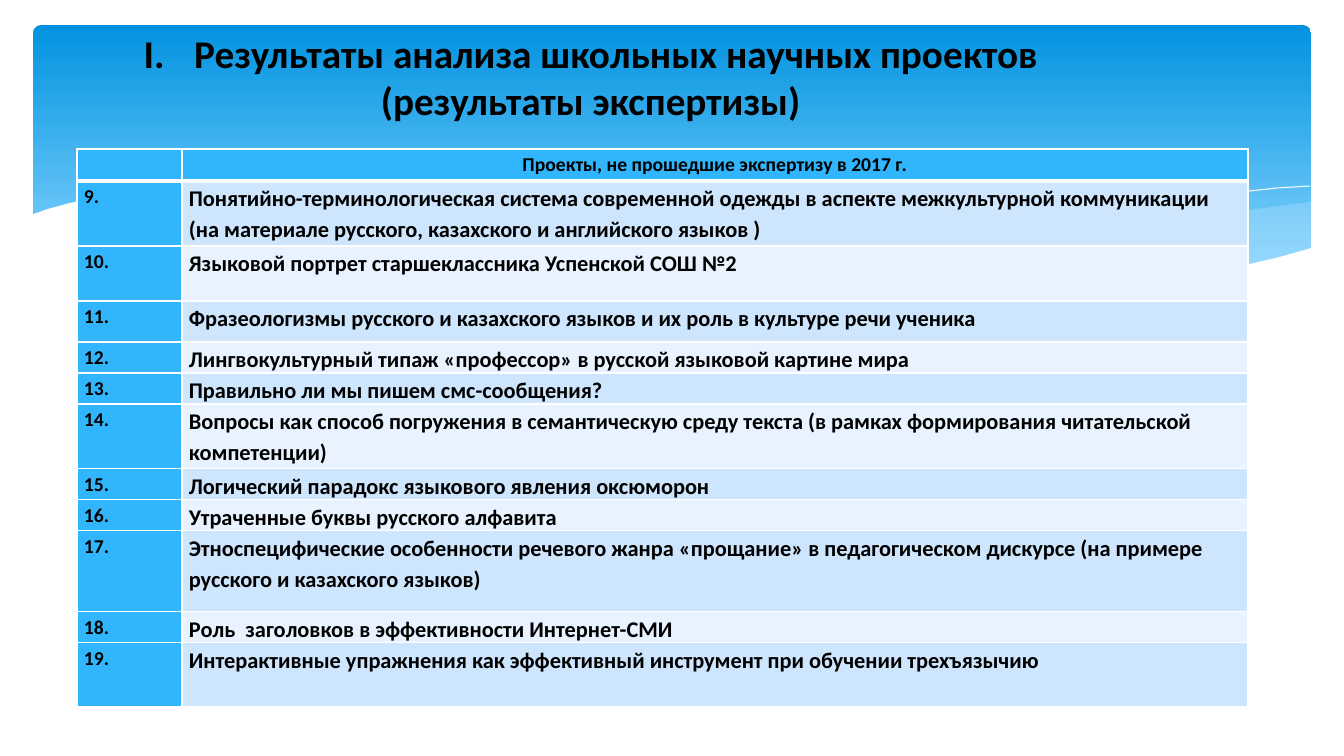
from dataclasses import dataclass

from lxml import etree
from pptx import Presentation
from pptx import util as u
from pptx.dml.color import RGBColor
from pptx.enum import shapes, text
from pptx.oxml import ns

SCALE = 914400 / 100.8


@dataclass(frozen=True)
class Theme:
    """Colours, font and type sizes of the deck."""
    font: str = "Calibri"
    ink: str = "000000"
    white: str = "FFFFFF"
    sky_top: str = "0293E0"
    sky_bottom: str = "83D3FE"
    swell: str = "C6E7FC"
    accent: str = "31B6FD"
    bands: tuple = ("CEE5FE", "E8F3FF")
    title: int = 28
    label: int = 14
    body: int = 16


THEME = Theme()
SLIDE = (0, 0, 1344, 756)
TITLE_BOX = (72, 10, 1037, 133)
TABLE_BOX = (77, 149, 1171, 558)

FAR_SWELL = [
    (1310, 202), (1256, 209), (1198, 218), (1156, 225), (1082, 239), (1013, 250),
    (948, 259), (889, 267), (947, 273), (1001, 277), (1049, 279), (1094, 280),
    (1135, 279), (1172, 277), (1206, 272), (1238, 267), (1267, 261), (1294, 254),
    (1311, 249), (1311, 202)]
NEAR_SWELL = [
    (1200, 275), (1163, 271), (1085, 262), (997, 249), (898, 233), (846, 224),
    (784, 213), (727, 204), (674, 198), (624, 193), (564, 188), (510, 186),
    (463, 187), (421, 190), (385, 193), (434, 198), (487, 205), (543, 213),
    (604, 224), (659, 234), (712, 242), (785, 254), (853, 263), (914, 270),
    (971, 275), (1022, 279), (1069, 280), (1113, 280), (1153, 279), (1188, 276)]
LONG_CREST = [
    (415, 197), (461, 192), (520, 188), (582, 188), (655, 192), (748, 198),
    (855, 210), (978, 228), (1117, 253), (1220, 274)]
SHORT_CREST = [
    (825, 259), (934, 237), (1005, 225), (1084, 212), (1164, 201), (1223, 194),
    (1277, 188), (1310, 186)]
SHORE = [
    (1312, 248), (1276, 258), (1237, 267), (1192, 273), (1143, 277), (1087, 279),
    (1023, 277), (952, 272), (870, 264), (778, 252), (676, 235), (601, 222),
    (525, 209), (457, 199), (393, 192), (336, 187), (260, 185), (196, 186),
    (143, 191), (102, 197), (70, 203), (48, 209), (31, 215), (31, 332),
    (1313, 332), (1313, 248)]

TITLE = "I.\tРезультаты анализа школьных научных проектов (результаты экспертизы)"
HEADING = "Проекты, не прошедшие экспертизу в 2017 г."
FIRST_NUMBER = 9
HEADING_HEIGHT = 32
COLUMNS = (105, 1066)
PROJECTS = [
    ("Понятийно-терминологическая система современной одежды в аспекте межкультурной "
     "коммуникации (на материале русского, казахского и английского языков )", 65),
    ("Языковой портрет старшеклассника Успенской СОШ №2", 55),
    ("Фразеологизмы русского и казахского языков и их роль в культуре речи ученика", 41),
    ("Лингвокультурный типаж «профессор» в русской языковой картине мира", 31),
    ("Правильно ли мы пишем смс-сообщения?", 31),
    ("Вопросы как способ погружения в семантическую среду текста "
     "(в рамках формирования читательской компетенции)", 65),
    ("Логический парадокс языкового явления оксюморон", 31),
    ("Утраченные буквы русского алфавита", 31),
    ("Этноспецифические особенности речевого жанра «прощание» в педагогическом "
     "дискурсе (на примере русского и казахского языков)", 81),
    ("Роль  заголовков в эффективности Интернет-СМИ", 31),
    ("Интерактивные упражнения как эффективный инструмент при обучении трехъязычию", 64),
]


def px(n):
    """Turn slide pixels into EMU."""
    return u.Emu(round(n * SCALE))


def rgb(value):
    """Return a colour object for a hex value."""
    return RGBColor.from_string(value)


def write(tf, content, size, align=text.PP_ALIGN.LEFT, spacing=1.0):
    """Put one bold paragraph into a text frame."""
    p = tf.paragraphs[0]
    p.alignment, p.line_spacing = align, spacing
    r = p.add_run()
    r.text = content
    r.font.name, r.font.size, r.font.bold = THEME.font, u.Pt(size), True
    r.font.color.rgb = rgb(THEME.ink)


def add_wave(slide, box, points, fill=None, alpha=100):
    """Draw a filled swell, or a white crest line when no fill is given."""
    x, y = box[:2]
    path = [(x + a, y + b) for a, b in points]
    builder = slide.shapes.build_freeform(*path[0], scale=SCALE)
    builder.add_line_segments(path[1:], close=fill is not None)
    sp = builder.convert_to_shape()
    sp.shadow.inherit = False
    if fill is None:
        sp.fill.background()
        sp.line.color.rgb = rgb(THEME.white)
        sp.line.width = 0
        return
    sp.line.fill.background()
    sp.fill.solid()
    sp.fill.fore_color.rgb = rgb(fill)
    if alpha < 100:
        colour = sp.fill._xPr.find(".//" + ns.qn("a:srgbClr"))
        etree.SubElement(colour, ns.qn("a:alpha"), val=str(alpha * 1000))


def add_backdrop(slide, box):
    """Draw the gradient panel and the waves along its lower edge."""
    x, y = box[:2]
    sp = slide.shapes.add_shape(shapes.MSO_SHAPE.ROUNDED_RECTANGLE,
                                px(x + 33), px(y + 25), px(1278), px(272))
    sp.adjustments[0] = 0.03
    sp.shadow.inherit = False
    sp.line.fill.background()
    sp.fill.gradient()
    sp.fill.gradient_angle = 270
    stops = ((THEME.sky_top, 0), (THEME.sky_bottom, 0.9))
    for stop, (colour, position) in zip(sp.fill.gradient_stops, stops):
        stop.color.rgb, stop.position = rgb(colour), position
    add_wave(slide, box, FAR_SWELL, THEME.swell, 29)
    add_wave(slide, box, NEAR_SWELL, THEME.swell, 40)
    add_wave(slide, box, LONG_CREST)
    add_wave(slide, box, SHORT_CREST)
    add_wave(slide, box, SHORE, THEME.white)


def add_title(slide, box):
    """Place the centred slide title."""
    tf = slide.shapes.add_textbox(*map(px, box)).text_frame
    tf.word_wrap = True
    tf.vertical_anchor = text.MSO_ANCHOR.MIDDLE
    write(tf, TITLE, THEME.title, text.PP_ALIGN.CENTER)


def style_cell(cell, fill, borders):
    """Set the fill, margins and white borders of a cell."""
    cell.margin_left = cell.margin_right = px(7)
    cell.margin_top = cell.margin_bottom = 0
    cell.fill.solid()
    cell.fill.fore_color.rgb = rgb(fill)
    tc_pr = cell._tc.get_or_add_tcPr()
    for i, (side, width) in enumerate(borders.items()):
        ln = etree.Element(ns.qn(f"a:ln{side}"), w=str(u.Pt(width)))
        solid = etree.SubElement(ln, ns.qn("a:solidFill"))
        etree.SubElement(solid, ns.qn("a:srgbClr"), val=THEME.white)
        tc_pr.insert(i, ln)


def add_projects(slide, box):
    """Build the numbered table of rejected projects."""
    table = slide.shapes.add_table(len(PROJECTS) + 1, len(COLUMNS), *map(px, box)).table
    for column, width in zip(table.columns, COLUMNS):
        column.width = px(width)
    heights = [HEADING_HEIGHT] + [height for _, height in PROJECTS]
    for i, (row, height) in enumerate(zip(table.rows, heights)):
        row.height = px(height)
        borders = {"L": 1, "R": 1, "T": 3 if i == 1 else 1, "B": 1 if i else 3}
        band = THEME.bands[(i - 1) % 2] if i else THEME.accent
        for cell, fill in zip(row.cells, (THEME.accent, band)):
            style_cell(cell, fill, borders)
    write(table.cell(0, 1).text_frame, HEADING, THEME.label, text.PP_ALIGN.CENTER, 1.15)
    for i, (name, _) in enumerate(PROJECTS):
        number, project = table.rows[i + 1].cells
        write(number.text_frame, f"{FIRST_NUMBER + i}.", THEME.label, spacing=1.15)
        write(project.text_frame, name, THEME.body, spacing=1.15)


def main():
    """Build and save the slide."""
    prs = Presentation()
    prs.slide_width, prs.slide_height = map(px, SLIDE[2:])
    slide = prs.slides.add_slide(prs.slide_layouts[6])
    add_backdrop(slide, SLIDE)
    add_title(slide, TITLE_BOX)
    add_projects(slide, TABLE_BOX)
    prs.save("out.pptx")


if __name__ == "__main__":
    main()
